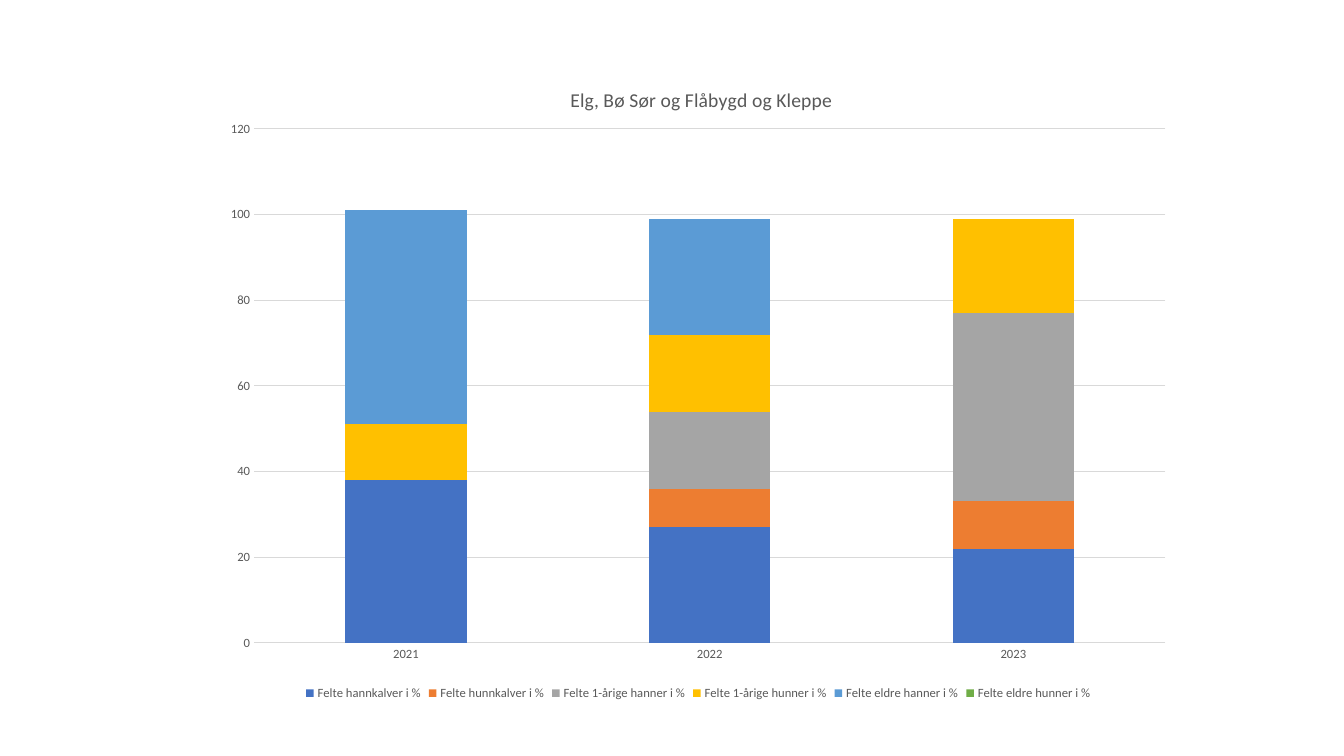
from lxml import etree
from pptx import Presentation
from pptx.chart import data as chart_data
from pptx.dml import color
from pptx.enum import chart as kinds
from pptx.oxml import ns
from pptx.util import Inches, Pt

# Content
TITLE = "Elg, Bø Sør og Flåbygd og Kleppe"
YEARS = ["2021", "2022", "2023"]
SERIES = [
    ("Felte hannkalver i %", (38, 27, 22), "4472C4"),
    ("Felte hunnkalver i %", (0, 9, 11), "ED7D31"),
    ("Felte 1-årige hanner i %", (0, 18, 44), "A5A5A5"),
    ("Felte 1-årige hunner i %", (13, 18, 22), "FFC000"),
    ("Felte eldre hanner i %", (50, 27, 0), "5B9BD5"),
    ("Felte eldre hunner i %", (0, 0, 0), "70AD47"),
]
CHART_BOX = (2.1, 0.56, 9.65, 6.43)
TITLE_PLACE = {"x": 0.365, "y": 0.04}
PLOT_PLACE = {"x": 0.0435, "y": 0.112, "w": 0.9366, "h": 0.793}
GREY, RULE = "595959", "D9D9D9"


def rgb(code):
    return color.RGBColor.from_string(code)


def set_font(font, size, code=GREY):
    values = {"name": "Calibri", "size": Pt(size), "bold": False}
    for name, value in values.items():
        setattr(font, name, value)
    font.color.rgb = rgb(code)


def set_line(line):
    line.color.rgb = rgb(RULE)
    line.width = Pt(0.75)


def place(parent, position, target=None):
    """Set a manual layout, given as fractions of the chart."""
    layout = parent.find(ns.qn("c:layout"))
    if layout is None:
        layout = etree.Element(ns.qn("c:layout"))
        parent.insert(0 if target else 1, layout)
    manual = etree.SubElement(layout, ns.qn("c:manualLayout"))
    entries = [("layoutTarget", target)] if target else []
    entries += [("xMode", "edge"), ("yMode", "edge"), *position.items()]
    for tag, value in entries:
        etree.SubElement(manual, ns.qn("c:" + tag)).set("val", str(value))


# Slide
presentation = Presentation()
presentation.slide_width, presentation.slide_height = Inches(13.33), Inches(7.5)
slide = presentation.slides.add_slide(presentation.slide_layouts[6])

# Stacked columns
values = chart_data.CategoryChartData()
values.categories = YEARS
for name, numbers, _ in SERIES:
    values.add_series(name, numbers)
chart = slide.shapes.add_chart(kinds.XL_CHART_TYPE.COLUMN_STACKED,
                               *map(Inches, CHART_BOX), values).chart
set_font(chart.font, 10, "000000")
plot = chart.plots[0]
for name, value in {"gap_width": 150, "overlap": 100,
                    "vary_by_categories": False}.items():
    setattr(plot, name, value)
for series, (_, _, code) in zip(plot.series, SERIES):
    series.format.fill.solid()
    series.format.fill.fore_color.rgb = rgb(code)

# Title
chart.has_title = True
title_frame = chart.chart_title.text_frame
title_frame.text = TITLE
set_font(title_frame.paragraphs[0].runs[0].font, 14)

# Axes
for axis in (chart.category_axis, chart.value_axis):
    axis.major_tick_mark = axis.minor_tick_mark = kinds.XL_TICK_MARK.NONE
    set_font(axis.tick_labels.font, 9)
set_line(chart.category_axis.format.line)
value_axis = chart.value_axis
for name, value in {"minimum_scale": 0, "maximum_scale": 120,
                    "major_unit": 20, "has_major_gridlines": True}.items():
    setattr(value_axis, name, value)
value_axis.format.line.fill.background()
set_line(value_axis.major_gridlines.format.line)

# Legend
chart.has_legend = True
chart.legend.position = kinds.XL_LEGEND_POSITION.BOTTOM
chart.legend.include_in_layout = False
set_font(chart.legend.font, 9)

# Placement inside the chart
chart_root = chart.element
place(next(chart_root.iter(ns.qn("c:title"))), TITLE_PLACE)
place(next(chart_root.iter(ns.qn("c:plotArea"))), PLOT_PLACE, "inner")

presentation.save("out.pptx")
